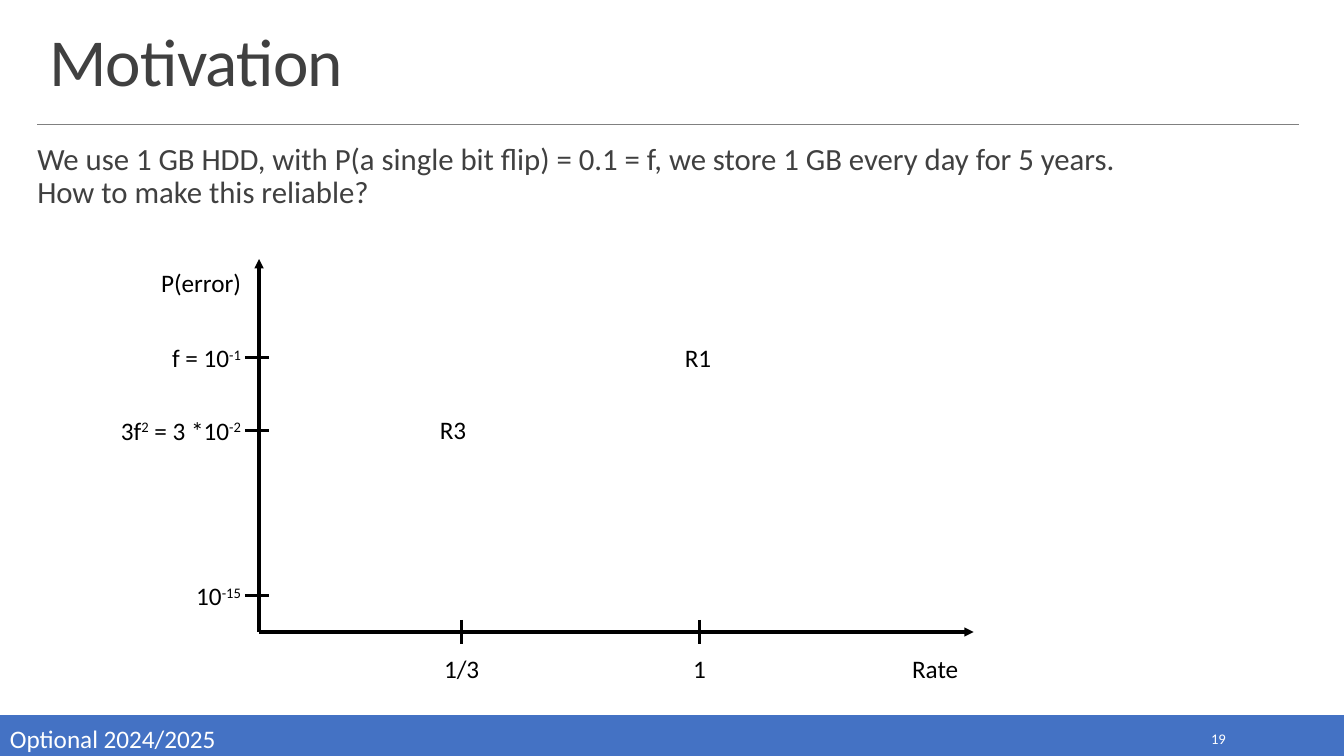
from dataclasses import dataclass

from lxml.etree import SubElement
from pptx import Presentation
from pptx.dml.color import RGBColor
from pptx.enum.shapes import MSO_CONNECTOR as Link, MSO_SHAPE as Form
from pptx.enum.text import MSO_ANCHOR as Anchor, PP_ALIGN as Align
from pptx.oxml.ns import qn
from pptx.util import Inches, Pt

COLS, ROWS = 160, 90
BLUE, GREY, DARK, BLACK, WHITE = "4472C4", "808080", "404040", "000000", "FFFFFF"

deck = Presentation()
deck.slide_width, deck.slide_height = Inches(13.333), Inches(7.5)
slide = deck.slides.add_slide(deck.slide_layouts[6])


@dataclass
class Box:
    left: float
    top: float
    width: float
    height: float = 4.8


@dataclass
class Mark:
    text: str
    spot: float


@dataclass
class Code:
    name: str
    mid: float
    top: float


def col(n: float) -> int:
    return round(deck.slide_width * n / COLS)


def row(n: float) -> int:
    return round(deck.slide_height * n / ROWS)


def paint(code: str) -> RGBColor:
    return RGBColor.from_string(code)


def place(box: Box) -> tuple[int, int, int, int]:
    return col(box.left), row(box.top), col(box.width), row(box.height)


def write(text: str, box: Box, size: float = 18, hue: str = BLACK,
          align: Align = Align.LEFT, anchor: Anchor = Anchor.TOP,
          lead: float = 1, before: float = 0, after: float = 0,
          track: int = 0, side: float = 0.1, edge: float = 0.05) -> None:
    frame = slide.shapes.add_textbox(*place(box)).text_frame
    frame.word_wrap = True
    frame.vertical_anchor = anchor
    frame.margin_left = frame.margin_right = Inches(side)
    frame.margin_top = frame.margin_bottom = Inches(edge)
    para = frame.paragraphs[0]
    para.alignment, para.line_spacing = align, lead
    para.space_before, para.space_after = Pt(before), Pt(after)
    for i, line in enumerate(text.split("\n")):
        if i:
            para.add_line_break()
        for j, part in enumerate(line.split("^")):
            if not part:
                continue
            run = para.add_run()
            run.text = part
            font = run.font
            font.name, font.size = "Calibri", Pt(size)
            font.color.rgb = paint(hue)
            props = run._r.get_or_add_rPr()
            if j % 2:
                props.set("baseline", "30000")
            if track:
                props.set("spc", str(track))


def draw(x1: float, y1: float, x2: float, y2: float, hue: str = BLACK,
         width: float = 2.25, arrow: bool = False) -> None:
    line = slide.shapes.add_connector(Link.STRAIGHT, col(x1), row(y1), col(x2), row(y2))
    line.line.color.rgb = paint(hue)
    line.line.width = Pt(width)
    if arrow:
        SubElement(line.line._get_or_add_ln(), qn("a:tailEnd"), type="triangle")
    SubElement(line._element.spPr, qn("a:effectLst"))


def frame_page() -> None:
    bar = slide.shapes.add_shape(Form.RECTANGLE, *place(Box(0, 85.2, COLS)))
    bar.shadow.inherit = False
    bar.fill.solid()
    bar.fill.fore_color.rgb = bar.line.color.rgb = paint(BLUE)
    bar.line.width = Pt(1.25)
    draw(4.44, 14.76, 154.68, 14.76, hue=GREY, width=0.5)
    write("Motivation", Box(4.68, 2.4, 150.24, 10.08), size=48, hue=DARK,
          anchor=Anchor.BOTTOM, lead=0.85, track=-50)
    write("We use 1 GB HDD, with P(a single bit flip) = 0.1 = f, "
          "we store 1 GB every day for 5 years.\nHow to make this reliable?",
          Box(4.44, 16.68, 150.24, 10.08), size=22, hue=DARK,
          lead=0.9, before=12, after=2, side=0, edge=0.04)
    write("19", Box(129.96, 86.28, 17.16, 3.36), size=10.5, hue=WHITE,
          align=Align.RIGHT, anchor=Anchor.MIDDLE)
    write("Optional 2024/2025", Box(0, 85.56, COLS / 2), hue=WHITE)


def plot() -> None:
    left, base, top, right = 30.84, 75.24, 30.84, 115.92
    half, wide, slim = 1.44, 18.84, 8.52
    edge, below = 29.88, 77.16
    draw(left, base, left, top, arrow=True)
    draw(left, base, right, base, arrow=True)
    write("Rate", Box(107.4, below, 11.28))
    write("P(error)", Box(edge - wide, 31.2, wide), align=Align.RIGHT)
    for mark in (Mark("1/3", 54.96), Mark("1", 83.28)):
        draw(mark.spot, base - half, mark.spot, base + half)
        write(mark.text, Box(mark.spot - slim / 2, below, slim), align=Align.CENTER)
    for mark in (Mark("f = 10^-1", 42.6), Mark("3f^2^ = 3 *10^-2", 51.24),
                 Mark("10^-15", 70.92)):
        draw(30.6 - half, mark.spot, 30.6 + half, mark.spot)
        write(mark.text, Box(edge - wide, mark.spot - 2.4, wide), align=Align.RIGHT)
    for code in (Code("R3", 53.94, 48.72), Code("R1", 83.1, 40.2)):
        write(code.name, Box(code.mid - slim / 2, code.top, slim), align=Align.CENTER)


frame_page()
plot()
deck.save("out.pptx")
